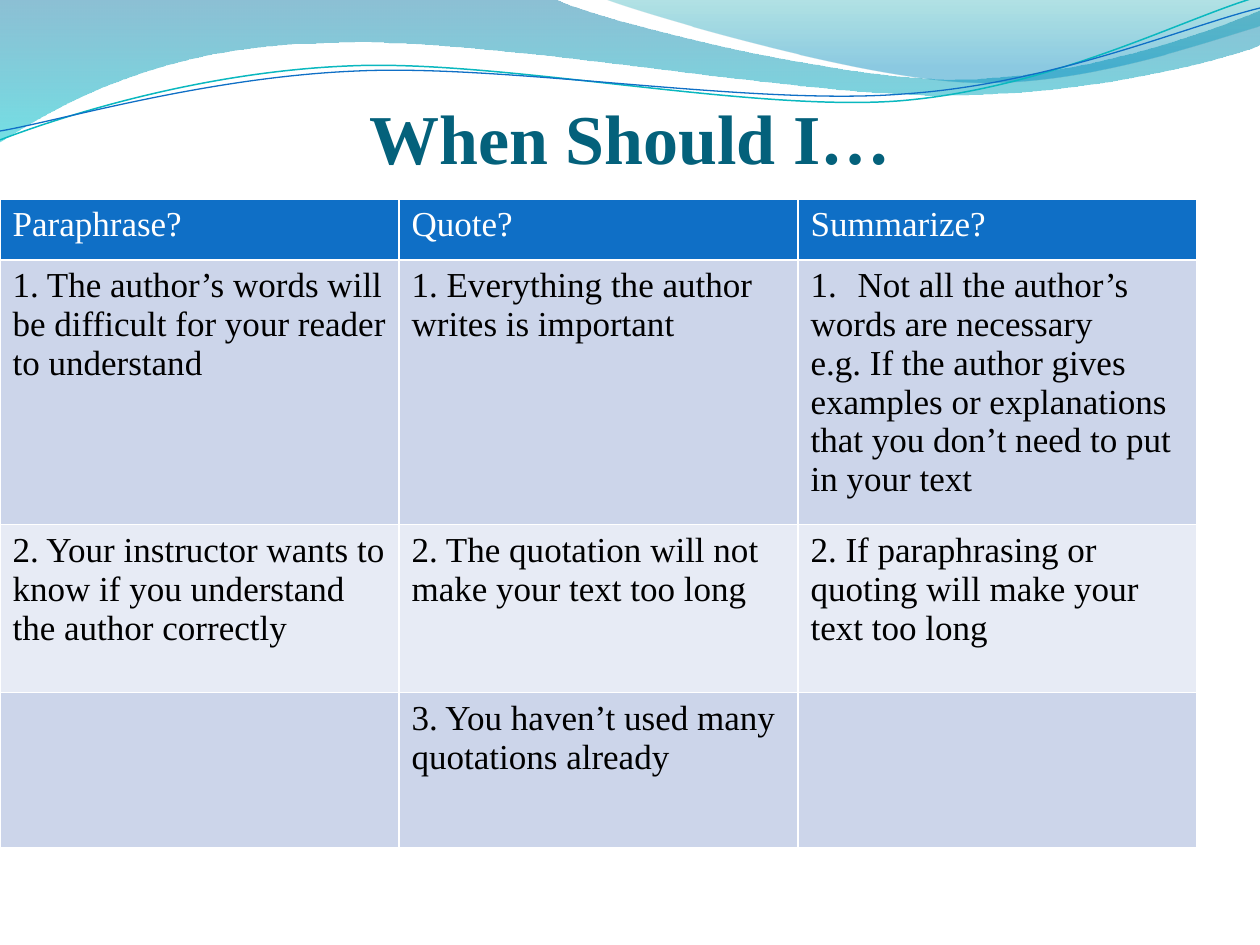
from dataclasses import dataclass
from math import cos, radians, sin
from typing import Optional

from pptx import Presentation
from pptx.dml.color import RGBColor as Rgb
from pptx.enum.text import MSO_ANCHOR as Anchor, PP_ALIGN as Align
from pptx.oxml.xmlchemy import OxmlElement as Element
from pptx.util import Emu, Pt

EMU_PER_PX = 914400 / 126
LINE_TILT = -2.7


def px(length: float) -> Emu:
    return Emu(round(length * EMU_PER_PX))


@dataclass(frozen=True)
class Theme:
    font: str = "Times New Roman"
    title_size: int = 40
    table_size: int = 20
    title: str = "04617B"
    header: str = "0F6FC6"
    bands: tuple = ("CCD5EA", "E7EBF5")
    header_text: str = "FFFFFF"
    body_text: str = "000000"
    border: str = "FFFFFF"
    border_width: int = 1
    # Gradient stops: position, colour, opacity in percent
    back_wave: tuple = ((0, "0074A1", 45), (1, "00C6CF", 55))
    front_wave: tuple = ((0, "00A1A9", 30), (0.8, "008BBF", 45))
    teal_line: tuple = ("0AB8BF", 0.85)
    blue_line: tuple = ("0F6FC6", 0.75)


THEME = Theme()


@dataclass(frozen=True)
class Wave:
    """Start point, then segments: one point for a line, three for a Bezier curve."""
    start: tuple
    segments: tuple
    gradient: Optional[tuple] = None
    line: Optional[tuple] = None
    pivot: Optional[tuple] = None


@dataclass(frozen=True)
class Entry:
    """Paragraphs of one table cell, hanging and numbered on request."""
    paragraphs: tuple = ()
    numbered: bool = False


WAVES = (
    Wave((0, 0), (((554, -1),), ((600, 21), (837, 79), (955, 79)),
                  ((1075, 79), (1207, 33), (1260, 11)), ((1261, 45),),
                  ((1239, 55), (1096, 96), (940, 95)), ((784, 95), (481, 35), (324, 43)),
                  ((163, 45), (58, 105), (-1, 142)), ((0, 0),)), gradient=THEME.back_wave),
    Wave((604, -1), (((642, 14), (859, 78), (969, 82)), ((1083, 87), (1211, 40), (1260, 26)),
                     ((1260, 0),), ((604, -1),)), gradient=THEME.front_wave),
    Wave((0, 140), (((60, 117), (199, 72), (349, 66)), ((498, 59), (747, 112), (898, 101)),
                    ((1050, 89), (1182, 19), (1257, -3))),
         line=THEME.teal_line, pivot=(629, 72)),
    Wave((0, 131), (((59, 121), (207, 77), (357, 71)), ((508, 64), (752, 106), (903, 94)),
                    ((1053, 84), (1186, 26), (1260, 8))),
         line=THEME.blue_line, pivot=(629, 74)),
)

COLUMN_WIDTH = 399
ROW_HEIGHTS = (61, 264, 168, 155)
ADVICE = (
    (Entry(("Paraphrase?",)), Entry(("Quote?",)), Entry(("Summarize?",))),
    (Entry(("1. The author’s words will be difficult for your reader to understand",)),
     Entry(("1. Everything the author writes is important",)),
     Entry(("Not all the author’s", "words are necessary", "e.g. If the author gives",
            "examples or explanations", "that you don’t need to put", "in your text"),
           numbered=True)),
    (Entry(("2. Your instructor wants to know if you understand the author correctly",)),
     Entry(("2. The quotation will not make your text too long",)),
     Entry(("2. If paraphrasing or quoting will make your text too long",))),
    (Entry(), Entry(("3. You haven’t used many quotations already",)), Entry()),
)


def add_run(paragraph, text: str, size: int, color: str, bold: bool = False) -> None:
    run = paragraph.add_run()
    run.text = text
    run.font.name = THEME.font
    run.font.size = Pt(size)
    run.font.bold = bold
    run.font.color.rgb = Rgb.from_string(color)


def place(point: tuple, pivot: Optional[tuple]) -> tuple:
    """Point in EMU, levelled around the pivot of a tilted line."""
    x, y = point
    if pivot:
        angle = radians(-LINE_TILT)
        dx, dy = x - pivot[0], y - pivot[1]
        x = pivot[0] + dx * cos(angle) - dy * sin(angle)
        y = pivot[1] + dx * sin(angle) + dy * cos(angle)
    return px(x), px(y)


def bend(shape, segments: list) -> None:
    """Turn the straight steps that have control points into Bezier curves."""
    steps = list(shape._element.spPr.iter("{*}lnTo"))
    for step, segment in zip(steps, segments):
        if len(segment) == 1:
            continue
        curve = Element("a:cubicBezTo")
        for x, y in segment:
            point = Element("a:pt")
            point.set("x", str(x - shape.left))
            point.set("y", str(y - shape.top))
            curve.append(point)
        step.getparent().replace(step, curve)


def add_wave(slide, wave: Wave) -> None:
    segments = [[place(point, wave.pivot) for point in segment] for segment in wave.segments]
    builder = slide.shapes.build_freeform(*place(wave.start, wave.pivot))
    builder.add_line_segments([segment[-1] for segment in segments],
                              close=wave.gradient is not None)
    shape = builder.convert_to_shape()
    bend(shape, segments)
    shape.shadow.inherit = False
    if wave.pivot:
        shape.rotation = LINE_TILT
    if wave.gradient:
        shape.line.fill.background()
        shape.fill.gradient()
        shape.fill.gradient_angle = 270
        for stop, (position, color, _) in zip(shape.fill.gradient_stops, wave.gradient):
            stop.position = position
            stop.color.rgb = Rgb.from_string(color)
        for node, (_, _, opacity) in zip(shape._element.spPr.iter("{*}srgbClr"), wave.gradient):
            alpha = Element("a:alpha")
            alpha.set("val", str(opacity * 1000))
            node.append(alpha)
    else:
        color, width = wave.line
        shape.fill.background()
        shape.line.color.rgb = Rgb.from_string(color)
        shape.line.width = Pt(width)


def add_title(slide, text: str) -> None:
    frame = slide.shapes.add_textbox(px(63), px(63), px(1134), px(116)).text_frame
    frame.word_wrap = True
    frame.vertical_anchor = Anchor.BOTTOM
    frame.margin_left = frame.margin_right = frame.margin_bottom = 0
    heading = frame.paragraphs[0]
    heading.alignment = Align.CENTER
    add_run(heading, text, THEME.title_size, THEME.title, bold=True)


def add_borders(cell) -> None:
    properties = cell._tc.get_or_add_tcPr()
    for index, side in enumerate(("a:lnL", "a:lnR", "a:lnT", "a:lnB")):
        border, fill, color = (Element(tag) for tag in (side, "a:solidFill", "a:srgbClr"))
        border.set("w", str(Pt(THEME.border_width)))
        color.set("val", THEME.border)
        fill.append(color)
        border.append(fill)
        properties.insert(index, border)


def hang(paragraph, with_number: bool) -> None:
    properties = paragraph._p.get_or_add_pPr()
    properties.set("marL", str(px(47)))
    properties.set("indent", str(-px(47)))
    if with_number:
        number = Element("a:buAutoNum")
        number.set("type", "arabicPeriod")
        properties.append(number)


def fill_cell(cell, entry: Entry, fill: str, text_color: str) -> None:
    cell.fill.solid()
    cell.fill.fore_color.rgb = Rgb.from_string(fill)
    add_borders(cell)
    frame = cell.text_frame
    for index, text in enumerate(entry.paragraphs):
        paragraph = frame.add_paragraph() if index else frame.paragraphs[0]
        if entry.numbered:
            hang(paragraph, with_number=index == 0)
        add_run(paragraph, text, THEME.table_size, text_color)


def add_advice_table(slide) -> None:
    columns = len(ADVICE[0])
    table = slide.shapes.add_table(len(ADVICE), columns, px(0), px(199),
                                   px(COLUMN_WIDTH * columns), px(sum(ROW_HEIGHTS))).table
    for column in table.columns:
        column.width = px(COLUMN_WIDTH)
    for r, (height, entries) in enumerate(zip(ROW_HEIGHTS, ADVICE)):
        table.rows[r].height = px(height)
        fill = THEME.bands[(r - 1) % 2] if r else THEME.header
        text_color = THEME.body_text if r else THEME.header_text
        for c, entry in enumerate(entries):
            fill_cell(table.cell(r, c), entry, fill, text_color)


def main() -> None:
    deck = Presentation()
    deck.slide_width, deck.slide_height = px(1260), px(945)
    slide = deck.slides.add_slide(deck.slide_layouts[6])
    # Decorative waves
    for wave in WAVES:
        add_wave(slide, wave)
    # Title and comparison table
    add_title(slide, "When Should I…")
    add_advice_table(slide)
    deck.save("out.pptx")


if __name__ == "__main__":
    main()
